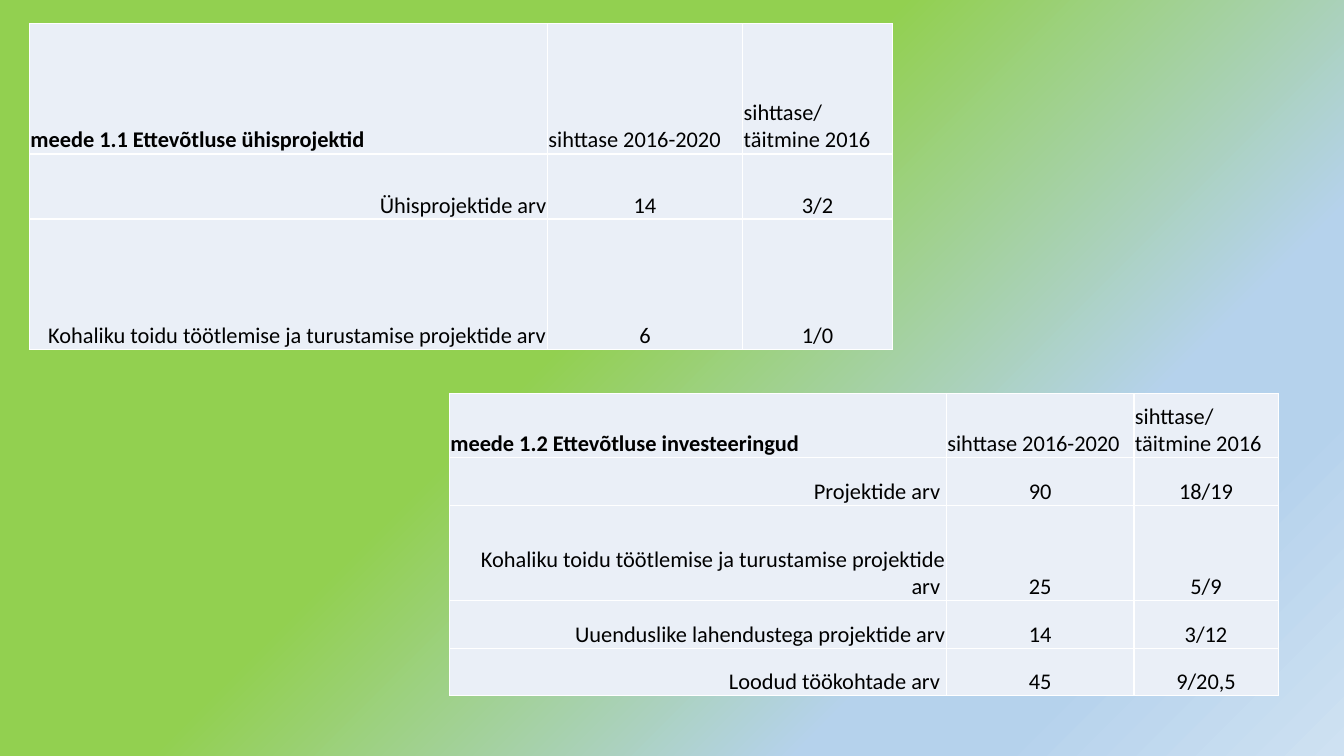
"""Build a slide with two tables of project targets on a diagonal gradient."""
from lxml.etree import SubElement
from pptx import Presentation
from pptx.dml.color import RGBColor
from pptx.enum.text import MSO_ANCHOR, PP_ALIGN
from pptx.oxml.ns import qn
from pptx.util import Pt

COLORS = {"text": "000000", "cell": "EAEFF7", "line": "FFFFFF",
          "green": "92D050", "blue": "B5D2EC", "pale": "CEE1F2"}
STOPS = [(43, "green"), (74, "blue"), (83, "blue"), (100, "pale")]
HEADS = ("sihttase 2016-2020", "sihttase/täitmine 2016")
TABLES = [
    {"left": 21, "top": 17, "cols": (370, 139.5, 107), "heights": (93, 46.5, 93),
     "rows": [
         ("meede 1.1 Ettevõtluse ühisprojektid", *HEADS),
         ("Ühisprojektide arv", "14", "3/2"),
         ("Kohaliku toidu töötlemise ja turustamise projektide arv", "6", "1/0"),
     ]},
    {"left": 321, "top": 281, "cols": (355, 134, 103), "heights": (46, 34, 68, 34, 34),
     "rows": [
         ("meede 1.2 Ettevõtluse investeeringud", *HEADS),
         ("Projektide arv ", "90", "18/19"),
         ("Kohaliku toidu töötlemise ja turustamise projektide arv ", "25", "5/9"),
         ("Uuenduslike lahendustega projektide arv", "14", "3/12"),
         ("Loodud töökohtade arv ", "45", "9/20,5"),
     ]},
]


def paint(slide):
    fill = slide.background.fill
    fill.gradient()
    fill.gradient_angle = 315
    stops = slide.element.find(".//" + qn("a:gsLst"))
    for old in list(stops):
        stops.remove(old)
    for share, name in STOPS:
        stop = SubElement(stops, qn("a:gs"), pos=str(share * 1000))
        SubElement(stop, qn("a:srgbClr"), val=COLORS[name])


def border(cell):
    props = cell._tc.get_or_add_tcPr()
    for place, side in enumerate(("a:lnL", "a:lnR", "a:lnT", "a:lnB")):
        line = props.makeelement(qn(side), {"w": str(Pt(1))})
        solid = SubElement(line, qn("a:solidFill"))
        SubElement(solid, qn("a:srgbClr"), val=COLORS["line"])
        props.insert(place, line)


def write(cell, text, align=PP_ALIGN.LEFT, bold=False, size=16):
    cell.margin_left = cell.margin_right = cell.margin_top = Pt(0.75)
    cell.margin_bottom = 0
    cell.vertical_anchor = MSO_ANCHOR.BOTTOM
    para = cell.text_frame.paragraphs[0]
    para.alignment = align
    run = para.add_run()
    run.text = text
    run.font.name = "Calibri"
    run.font.size = Pt(size)
    run.font.bold = bold
    run.font.color.rgb = RGBColor.from_string(COLORS["text"])


def build(slide, data):
    rows, cols, heights = data["rows"], data["cols"], data["heights"]
    table = slide.shapes.add_table(
        len(rows), len(cols), Pt(data["left"]), Pt(data["top"]),
        Pt(sum(cols)), Pt(sum(heights))).table
    table.first_row = table.horz_banding = False
    for col, width in zip(table.columns, cols):
        col.width = Pt(width)
    for row, height in zip(table.rows, heights):
        row.height = Pt(height)
    for r, texts in enumerate(rows):
        for c, text in enumerate(texts):
            cell = table.cell(r, c)
            cell.fill.solid()
            cell.fill.fore_color.rgb = RGBColor.from_string(COLORS["cell"])
            border(cell)
            body = PP_ALIGN.CENTER if c else PP_ALIGN.RIGHT
            write(cell, text, align=body if r else PP_ALIGN.LEFT,
                  bold=r == 0 and c == 0)


def main():
    deck = Presentation()
    deck.slide_width, deck.slide_height = Pt(960), Pt(540)
    slide = deck.slides.add_slide(deck.slide_layouts[6])
    paint(slide)
    for data in TABLES:
        build(slide, data)
    deck.save("out.pptx")


if __name__ == "__main__":
    main()
